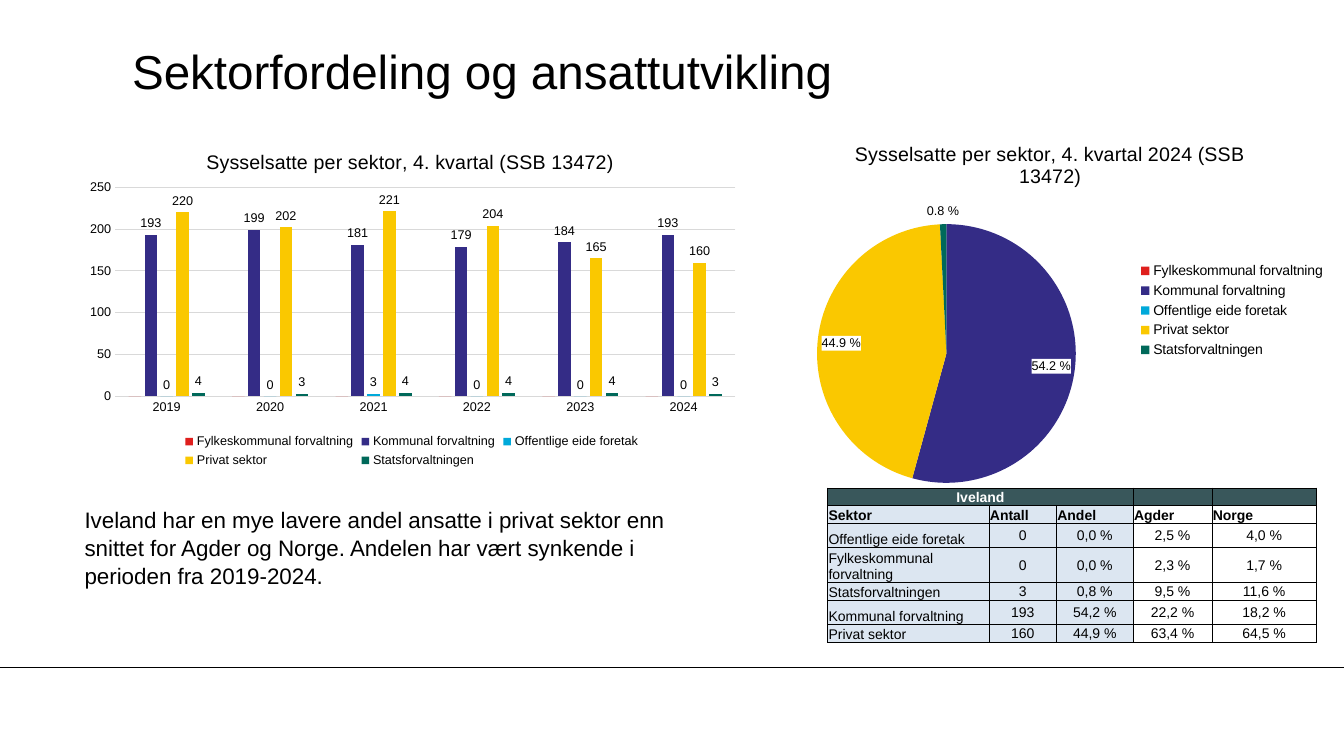
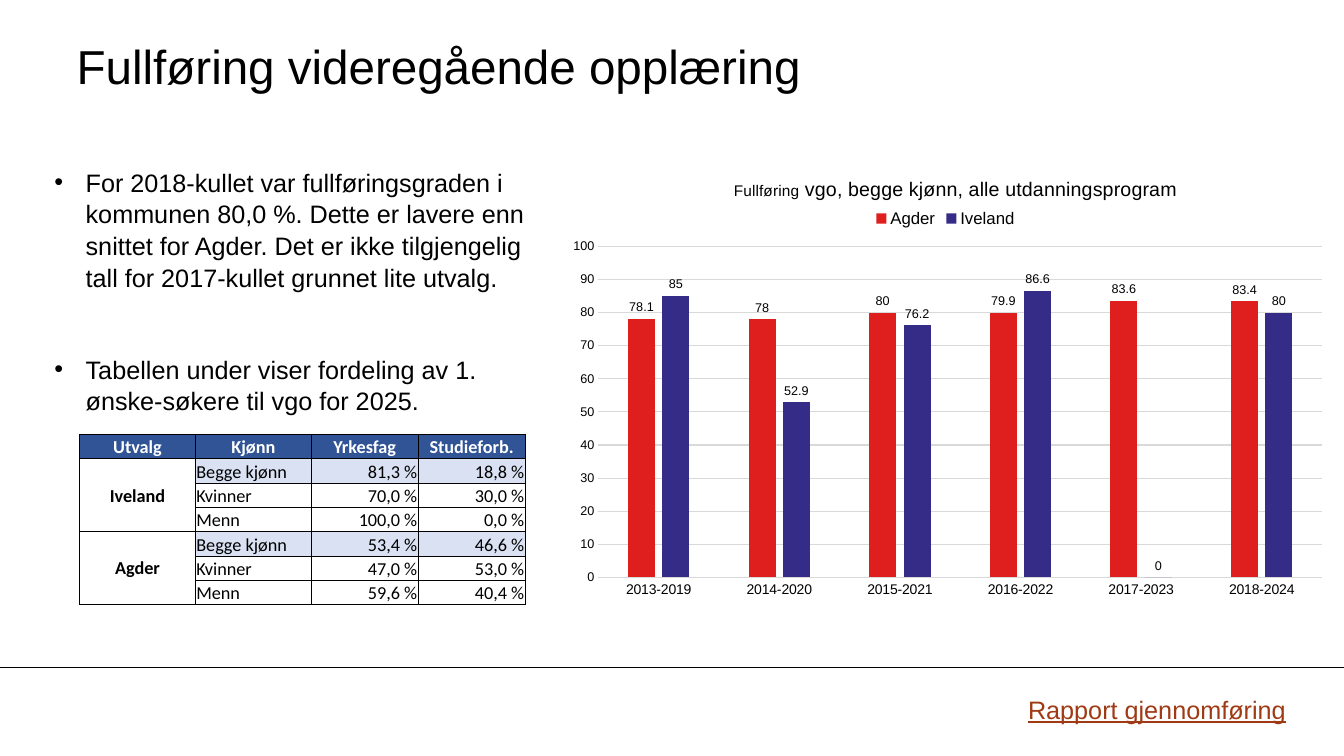
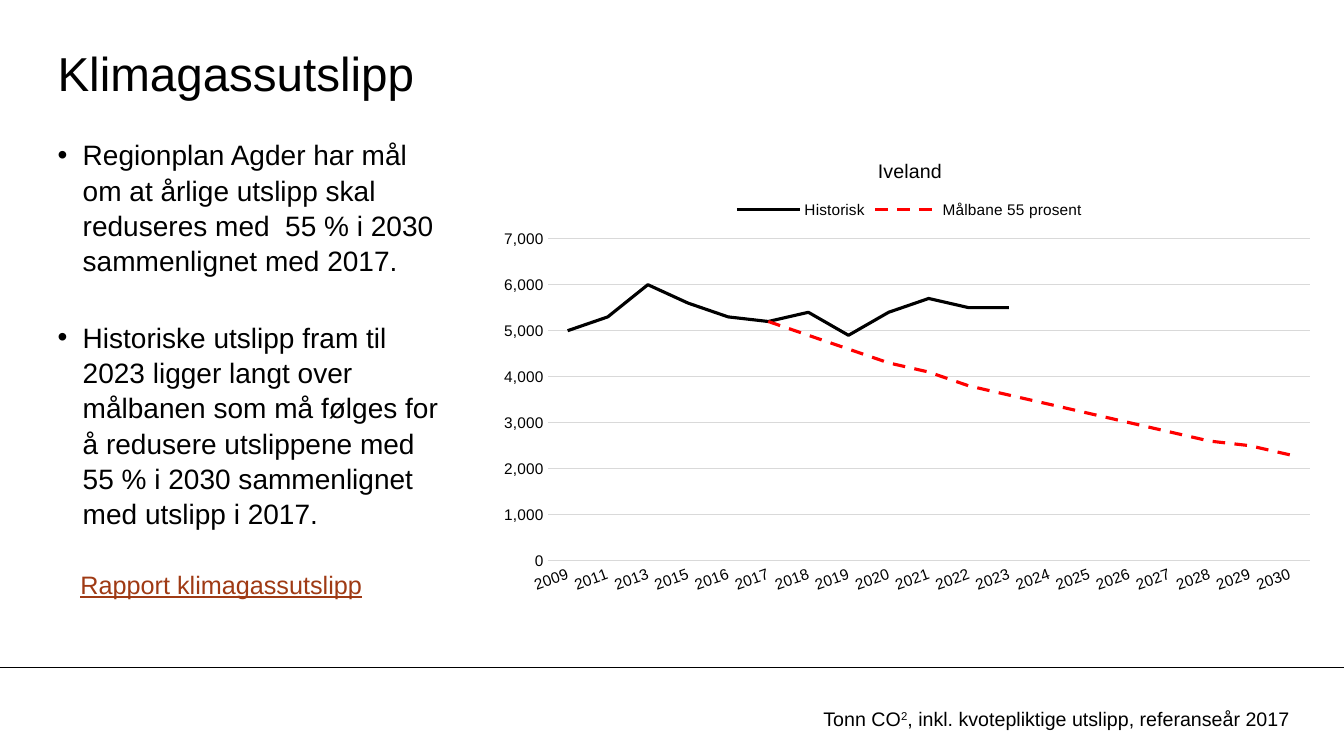
"""Build three slides on jobs, schooling and emissions in Iveland."""
import lxml.etree
import pptx
import pptx.chart.data
import pptx.dml.color
import pptx.enum.chart
import pptx.enum.dml
import pptx.enum.shapes
import pptx.enum.text
import pptx.oxml.ns
import pptx.util

qn = pptx.oxml.ns.qn
Pt = pptx.util.Pt
Sub = lxml.etree.SubElement
Kind = pptx.enum.chart.XL_CHART_TYPE
Side = pptx.enum.chart.XL_LEGEND_POSITION
Place = pptx.enum.chart.XL_LABEL_POSITION
Align = pptx.enum.text.PP_ALIGN
Mid = pptx.enum.text.MSO_ANCHOR.MIDDLE
Low = pptx.enum.text.MSO_ANCHOR.BOTTOM

BLACK, WHITE, GREY, RUST = "000000", "FFFFFF", "D9D9D9", "9F3A14"
RED, BLUE, CYAN, GOLD, GREEN = "DF1F1D", "342C86", "00A9DA", "FAC800", "00695A"
FIVE = [RED, BLUE, CYAN, GOLD, GREEN]


def ink(code):
    """Turn a hex string into a colour."""
    return pptx.dml.color.RGBColor.from_string(code)


def say(para, text, size, tint=BLACK, face="Arial", bold=False):
    """Add one run of text to a paragraph."""
    run = para.add_run()
    run.text = text
    run.font.size = Pt(size)
    run.font.name = face
    run.font.bold = bold
    run.font.color.rgb = ink(tint)
    return run


deck = pptx.Presentation()
deck.slide_width = pptx.util.Inches(13.33)
deck.slide_height = pptx.util.Inches(7.5)
col, row = deck.slide_width / 100, deck.slide_height / 100

spots = {
    "head1": (9.83, 4.27, 83.25, 10),
    "head2": (5.7, 3.6, 83.25, 10),
    "head3": (4.28, 4.53, 83.25, 10),
    "note": (5.55, 66.13, 48.08, 12.13),
    "jobs": (61.58, 64.53, 36.38, 17),
    "bars": (5.55, 17.07, 50.18, 45.33),
    "pie": (56.48, 16.27, 42.9, 49.6),
    "list2": (3.3, 21.2, 38.78, 34),
    "wish": (5.92, 57.47, 33.15, 22.53),
    "link2": (75.75, 90.93, 21.08, 5.33),
    "pairs": (41.63, 20, 57.9, 60),
    "list3": (4.28, 18, 29.1, 56.53),
    "foot": (60.53, 92.67, 38.18, 4.53),
    "link3": (5.25, 74.4, 23.7, 5.33),
    "trend": (36.38, 18, 62.33, 61.73),
}
area = {name: [int(part * unit) for part, unit in zip(spot, (col, row) * 2)]
        for name, spot in spots.items()}

slides = []
heads = [("Sektorfordeling og ansattutvikling", 5),
         ("Fullføring videregående opplæring", 1),
         ("Klimagassutslipp", 1)]
for num, (text, kind) in enumerate(heads, 1):
    slide = deck.slides.add_slide(deck.slide_layouts[kind])
    title = slide.shapes.title
    title.left, title.top, title.width, title.height = area[f"head{num}"]
    frame = title.text_frame
    frame.auto_size = pptx.enum.text.MSO_AUTO_SIZE.NONE
    frame.vertical_anchor = Mid
    frame.margin_left = frame.margin_right = frame.margin_top = frame.margin_bottom = 0
    frame.paragraphs[0].alignment = Align.LEFT
    say(frame.paragraphs[0], text, 34)
    slides.append(slide)
first, second, third = slides

level = int(88.27 * row)
rule = first.shapes.add_connector(
    pptx.enum.shapes.MSO_CONNECTOR.STRAIGHT, 0, level, deck.slide_width, level)
rule.line.color.rgb = ink(BLACK)
rule.line.width = Pt(0.75)
Sub(rule.element.spPr, qn("a:effectLst"))
rule.element.xpath(".//p:cNvPr")[0].set("id", "99")
deck.slide_master.shapes.element.append(rule.element)

lists = [
    (second, "list2", 18, 43, 0.31, (0.1, 0.05), [
        "For 2018-kullet var fullføringsgraden i kommunen 80,0 %. Dette er lavere enn "
        "snittet for Agder. Det er ikke tilgjengelig tall for 2017-kullet grunnet lite utvalg.",
        "Tabellen under viser fordeling av 1. ønske-søkere til vgo for 2025."]),
    (third, "list3", 20, 29.6, 0.25, (0, 0), [
        "Regionplan Agder har mål om at årlige utslipp skal reduseres med  55 % i 2030 "
        "sammenlignet med 2017.",
        "Historiske utslipp fram til 2023 ligger langt over målbanen som må følges for "
        "å redusere utslippene med 55 % i 2030 sammenlignet med utslipp i 2017."]),
]
for slide, name, size, gap, dent, pad, items in lists:
    body = slide.placeholders[1]
    body.left, body.top, body.width, body.height = area[name]
    frame = body.text_frame
    frame.auto_size = pptx.enum.text.MSO_AUTO_SIZE.NONE
    frame.margin_left = frame.margin_right = pptx.util.Inches(pad[0])
    frame.margin_top = frame.margin_bottom = pptx.util.Inches(pad[1])
    for num, text in enumerate(items):
        para = frame.add_paragraph() if num else frame.paragraphs[0]
        props = para._p.get_or_add_pPr()
        props.set("marL", str(pptx.util.Inches(dent)))
        props.set("indent", str(-pptx.util.Inches(dent)))
        para.line_spacing = 1.05
        para.space_before = Pt(gap if num else 0)
        say(para, text, size)

notes = [
    (first, "note", 16, BLACK, [
        "Iveland har en mye lavere andel ansatte i privat sektor enn snittet for Agder "
        "og Norge. Andelen har vært synkende i perioden fra 2019-2024."]),
    (second, "link2", 18, RUST, ["Rapport gjennomføring"]),
    (third, "link3", 18, RUST, ["Rapport klimagassutslipp"]),
    (third, "foot", 14, BLACK,
     ["Tonn CO", "2", ", inkl. kvotepliktige utslipp, referanseår 2017"]),
]
for slide, name, size, tint, parts in notes:
    frame = slide.shapes.add_textbox(*area[name]).text_frame
    frame.word_wrap = True
    para = frame.paragraphs[0]
    para.line_spacing = 1.05
    for text in parts:
        run = say(para, text, size, tint)
        run.font.underline = tint == RUST
        if text == "2":
            run.font._element.set("baseline", "30000")

tables = [
    (first, "jobs", "Arial", 10, "39575B", "DCE6F1",
     [33, 13.8, 15.7, 16.1, 21.4], [1.87, 1.87, 3.2, 3.2, 1.87, 3.2, 1.87],
     ["ccccc", "lllll"] + ["lcccc"] * 5,
     {(r, c) for r in range(2) for c in range(5)},
     {(r, c) for r in range(1, 7) for c in range(3)},
     [(0, 0, 0, 2)],
     [["Iveland", "", "", "", ""],
      ["Sektor", "Antall", "Andel", "Agder", "Norge"],
      ["Offentlige eide foretak", "0", "0,0 %", "2,5 %", "4,0 %"],
      ["Fylkeskommunal forvaltning", "0", "0,0 %", "2,3 %", "1,7 %"],
      ["Statsforvaltningen", "3", "0,8 %", "9,5 %", "11,6 %"],
      ["Kommunal forvaltning", "193", "54,2 %", "22,2 %", "18,2 %"],
      ["Privat sektor", "160", "44,9 %", "63,4 %", "64,5 %"]]),
    (second, "wish", "Calibri", 13, "305496", "D9E1F2",
     [26, 26, 24, 24], [3.22] * 7,
     ["cccc"] + ["clrr"] * 6,
     {(0, c) for c in range(4)} | {(r, 0) for r in range(7)},
     {(r, c) for r in (1, 4) for c in range(1, 4)},
     [(1, 0, 3, 0), (4, 0, 6, 0)],
     [["Utvalg", "Kjønn", "Yrkesfag", "Studieforb."],
      ["Iveland", "Begge kjønn", "81,3 %", "18,8 %"],
      ["", "Kvinner", "70,0 %", "30,0 %"],
      ["", "Menn", "100,0 %", "0,0 %"],
      ["Agder", "Begge kjønn", "53,4 %", "46,6 %"],
      ["", "Kvinner", "47,0 %", "53,0 %"],
      ["", "Menn", "59,6 %", "40,4 %"]]),
]
ways = {"l": Align.LEFT, "c": Align.CENTER, "r": Align.RIGHT}
for (slide, name, face, size, dark, pale, wides, talls,
     codes, bolds, tones, joins, data) in tables:
    grid = slide.shapes.add_table(len(data), len(wides), *area[name]).table
    grid.first_row = grid.horz_banding = False
    for part, wide in zip(grid.columns, wides):
        part.width = int(area[name][2] * wide / 100)
    for part, tall in zip(grid.rows, talls):
        part.height = int(tall * row)
    for r, line in enumerate(data):
        for c, text in enumerate(line):
            cell = grid.cell(r, c)
            cell.margin_left = cell.margin_right = cell.margin_top = pptx.util.Inches(0.01)
            cell.margin_bottom = 0
            code = codes[r][c]
            cell.vertical_anchor = Mid if code == "c" and r else Low
            para = cell.text_frame.paragraphs[0]
            para.alignment = ways[code]
            if text:
                say(para, text, size, BLACK if r else WHITE, face, (r, c) in bolds)
            else:
                Sub(para._p, qn("a:endParaRPr"), sz=str(size * 100))
            props = cell._tc.get_or_add_tcPr()
            for edge in "LRTB":
                side = Sub(props, qn(f"a:ln{edge}"), w=str(Pt(0.5)))
                fill = Sub(side, qn("a:solidFill"))
                Sub(fill, qn("a:srgbClr"), val=BLACK)
            cell.fill.solid()
            cell.fill.fore_color.rgb = ink(pale if (r, c) in tones else WHITE if r else dark)
    for top, left, base, right in joins:
        grid.cell(top, left).merge(grid.cell(base, right))

sects = ["Fylkeskommunal forvaltning", "Kommunal forvaltning",
         "Offentlige eide foretak", "Privat sektor", "Statsforvaltningen"]
counts = [[0] * 6, [193, 199, 181, 179, 184, 193], [0, 0, 3, 0, 0, 0],
          [220, 202, 221, 204, 165, 160], [4, 3, 4, 4, 4, 3]]
past = [5000, 5300, 6000, 5600, 5300, 5200, 5400, 4900, 5400, 5700, 5500, 5500]
goal = [5200, 4900, 4600, 4300, 4100, 3800, 3600, 3400, 3200, 3000, 2800, 2600, 2500, 2300]

charts = [
    (first, "bars", Kind.COLUMN_CLUSTERED, [("Sysselsatte per sektor, 4. kvartal (SSB 13472)", 14)],
     [str(year) for year in range(2019, 2025)], list(zip(sects, counts)), FIVE,
     Side.BOTTOM, 9, (9, 9), (250, 50),
     (0.06, 0.17, 0.92, 0.61), (0.19, 0.05), None),
    (first, "pie", Kind.PIE, [("Sysselsatte per sektor, 4. kvartal 2024 (SSB 13472)", 14)],
     sects, [("Series 1", [0, 54.2, 0, 44.9, 0.8])], FIVE,
     Side.RIGHT, 10, None, None,
     (0.1, 0.27, 0.45, 0.69), (0.16, 0.04), None),
    (second, "pairs", Kind.COLUMN_CLUSTERED,
     [("Fullføring", 11), (" vgo, begge kjønn, alle utdanningsprogram", 14)],
     [f"{year}-{year + 6}" for year in range(2013, 2019)],
     [("Agder", [78.1, 78, 80, 79.9, 83.6, 83.4]),
      ("Iveland", [85, 52.9, 76.2, 86.6, 0, 80])], [RED, BLUE],
     Side.TOP, 12, (10, 9), (100, 10),
     (0.05, 0.21, 0.93, 0.73), (0.22, 0.05), (0.4, 0.12)),
    (third, "trend", Kind.LINE, [("Iveland", 14)],
     [str(year) for year in (2009, 2011, 2013, *range(2015, 2031))],
     [("Historisk", past + [None] * 7), ("Målbane 55 prosent", [None] * 5 + goal)],
     [BLACK, "FF0000"],
     Side.TOP, 11, (11, 11), (7000, 1000),
     (0.07, 0.22, 0.91, 0.69), (0.46, 0.04), (0.29, 0.13)),
]
for (slide, name, kind, title, cats, rows, tints, side, small,
     sizes, scale, plane, crown, key) in charts:
    data = pptx.chart.data.CategoryChartData()
    data.categories = cats
    for label, vals in rows:
        data.add_series(label, vals)
    chart = slide.shapes.add_chart(kind, *area[name], data).chart
    chart.font.size = Pt(10)
    chart.font.name = "Arial"
    chart.font.color.rgb = ink(BLACK)
    chart.has_title = True
    for text, size in title:
        say(chart.chart_title.text_frame.paragraphs[0], text, size)
    chart.has_legend = True
    chart.legend.position = side
    chart.legend.include_in_layout = False
    chart.legend.font.size = Pt(small)
    chart.legend.font.name = "Arial"
    chart.legend.font.color.rgb = ink(BLACK)

    root = chart.element
    for tag, spot, slot in (("plotArea", plane, 0), ("title", crown, 1), ("legend", key, 1)):
        if spot:
            node = root.find("c:chart/c:" + tag, root.nsmap)
            for old in node.findall(qn("c:layout")):
                node.remove(old)
            lay = lxml.etree.Element(qn("c:layout"))
            hand = Sub(lay, qn("c:manualLayout"))
            if tag == "plotArea":
                Sub(hand, qn("c:layoutTarget"), val="inner")
            for axis in "xy":
                Sub(hand, qn(f"c:{axis}Mode"), val="edge")
            for axis, share in zip("xywh", spot):
                Sub(hand, qn("c:" + axis), val=str(share))
            node.insert(slot, lay)

    plot = chart.plots[0]
    plot.vary_by_categories = kind == Kind.PIE
    if sizes:
        cross, up = chart.category_axis, chart.value_axis
        for axis, size in zip((cross, up), sizes):
            axis.major_tick_mark = pptx.enum.chart.XL_TICK_MARK.NONE
            axis.tick_labels.font.size = Pt(size)
            axis.tick_labels.font.name = "Arial"
            axis.tick_labels.font.color.rgb = ink(BLACK)
        cross.format.line.color.rgb = ink(GREY)
        cross.format.line.width = Pt(0.75)
        up.format.line.fill.background()
        up.major_gridlines.format.line.color.rgb = ink(GREY)
        up.major_gridlines.format.line.width = Pt(0.75)
        up.tick_labels.number_format = "#,##0"
        up.tick_labels.number_format_is_linked = False
        up.minimum_scale = 0
        up.maximum_scale, up.major_unit = scale

    if kind == Kind.LINE:
        cross._element.txPr.find(qn("a:bodyPr")).set("rot", "-1200000")
        for line, tint in zip(plot.series, tints):
            line.smooth = False
            line.marker.style = pptx.enum.chart.XL_MARKER_STYLE.NONE
            line.format.line.color.rgb = ink(tint)
            line.format.line.width = Pt(2.25)
        line.format.line.dash_style = pptx.enum.dml.MSO_LINE.DASH
        continue

    if kind == Kind.PIE:
        parts = [plot.series[0].points[num] for num in range(len(tints))]
    else:
        parts = plot.series
        plot.gap_width, plot.overlap = 219, -27
    for part, tint in zip(parts, tints):
        part.format.fill.solid()
        part.format.fill.fore_color.rgb = ink(tint)
    for bar in plot.series:
        if bar.name == sects[0]:
            continue
        tags = bar.data_labels
        tags.show_value = True
        tags.font.size = Pt(9)
        tags.font.name = "Arial"
        tags.font.color.rgb = ink(BLACK)
        tags.position = Place.BEST_FIT if kind == Kind.PIE else Place.OUTSIDE_END
        tags.number_format = '0.0" %";;' if kind == Kind.PIE else "General"
        tags.number_format_is_linked = False
        if kind == Kind.PIE:
            back = lxml.etree.Element(qn("c:spPr"))
            Sub(Sub(back, qn("a:solidFill")), qn("a:srgbClr"), val=WHITE)
            tags._element.find(qn("c:numFmt")).addnext(back)

deck.save("out.pptx")
